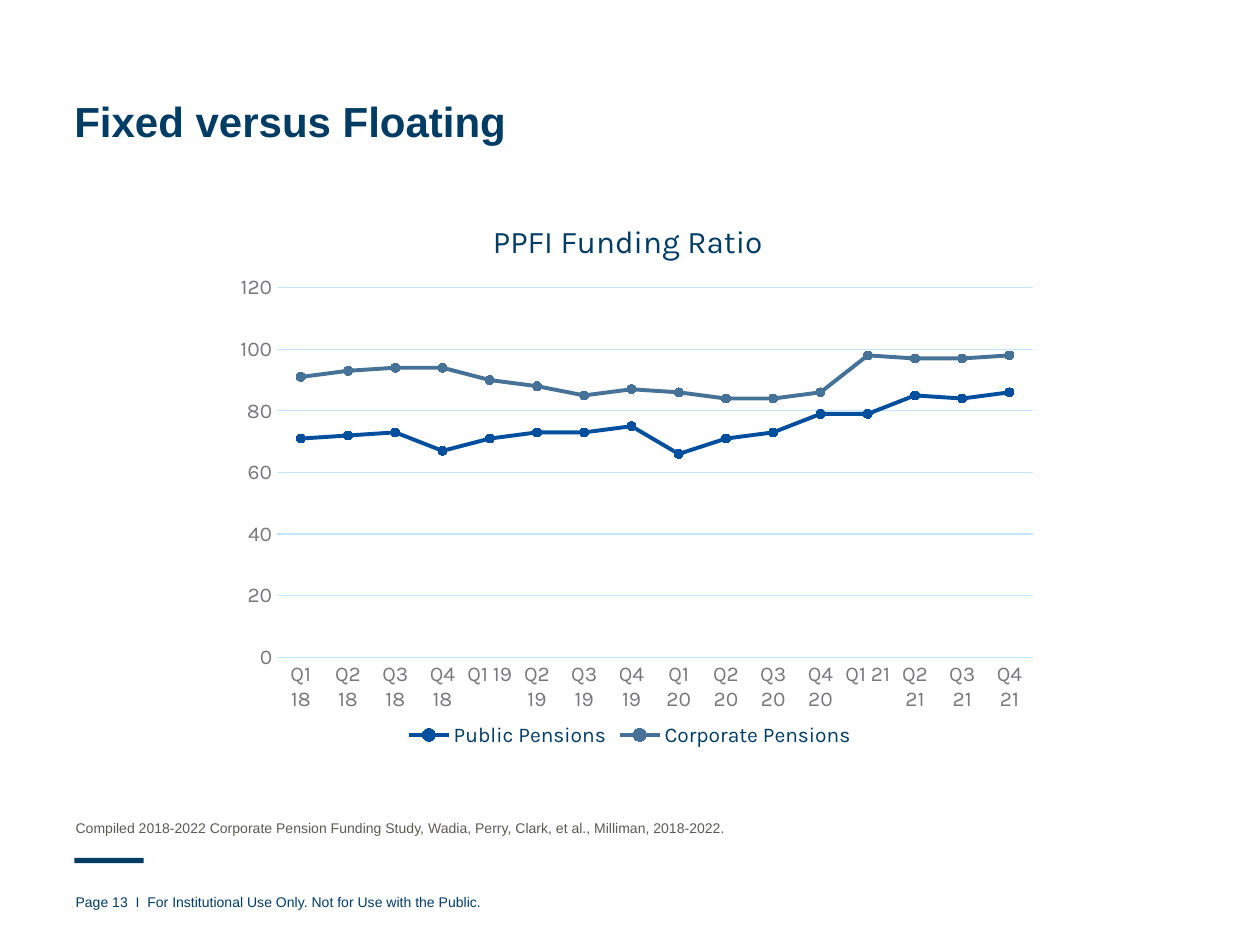
from dataclasses import dataclass, field
from typing import Any

from lxml.etree import SubElement
from pptx import Presentation
from pptx.chart.data import CategoryChartData
from pptx.dml.color import RGBColor
from pptx.enum.chart import (XL_CHART_TYPE, XL_LEGEND_POSITION,
                             XL_MARKER_STYLE, XL_TICK_MARK)
from pptx.enum.shapes import MSO_SHAPE
from pptx.enum.text import MSO_ANCHOR
from pptx.oxml.ns import qn
from pptx.util import Pt

NAVY, GREY, SKY = "003C64", "77787B", "C2E6FF"


@dataclass
class Label:
    text: str
    box: tuple[float, float, float, float]
    anchor: Any = MSO_ANCHOR.BOTTOM
    color: str = NAVY
    form: dict = field(default_factory=lambda: {"size": Pt(8)})


@dataclass
class Trend:
    name: str
    color: str
    vals: tuple[int, ...]


LABELS = [
    Label("Page 13  I", (43.2, 506.9, 53.3, 13)),
    Label("For Institutional Use Only. Not for Use with the Public.",
          (84.2, 492.5, 438.5, 27.4), color="003C6A"),
    Label("Compiled 2018-2022 Corporate Pension Funding Study, Wadia, Perry, "
          "Clark, et al., Milliman, 2018-2022.",
          (43.2, 429.8, 634.3, 48.2), color="5B5A51"),
    Label("Fixed versus Floating", (42.5, 54.7, 635, 31), MSO_ANCHOR.TOP,
          form={"size": Pt(24), "bold": True}),
]
TRENDS = [
    Trend("Public Pensions", "004F9F",
          (71, 72, 73, 67, 71, 73, 73, 75, 66, 71, 73, 79, 79, 85, 84, 86)),
    Trend("Corporate Pensions", "457296",
          (91, 93, 94, 94, 90, 88, 85, 87, 86, 84, 84, 86, 98, 97, 97, 98)),
]
QUARTERS = [f"Q{part} {year}" for year in range(18, 22) for part in range(1, 5)]


def paint(part: Any, color: str) -> None:
    """Give a font, fill or line the hex colour."""
    if hasattr(part, "solid"):
        part.solid()
        part = part.fore_color
    else:
        part = part.color
    part.rgb = RGBColor.from_string(color)


def apply(part: Any, form: dict) -> None:
    """Set every format value on the part."""
    for key, val in form.items():
        setattr(part, key, val)


def style(font: Any, color: str, form: dict) -> None:
    """Format a font and colour it."""
    apply(font, form)
    paint(font, color)


def stroke(line: Any, color: str, width: float) -> None:
    """Colour a line and set its width in points."""
    paint(line, color)
    line.width = Pt(width)


def place(home: Any, spots: dict, inner: bool = False) -> None:
    """Fix a chart part at fractions of the chart area."""
    layout = home.find(qn("c:layout"))
    if layout is None:
        layout = home.makeelement(qn("c:layout"))
        text = home.find(qn("c:tx"))
        home.insert(0 if text is None else home.index(text) + 1, layout)
    for child in list(layout):
        layout.remove(child)
    manual = SubElement(layout, qn("c:manualLayout"))
    rules = {"layoutTarget": "inner"} if inner else {}
    rules |= {"xMode": "edge", "yMode": "edge"} | spots
    for key, val in rules.items():
        SubElement(manual, qn(f"c:{key}")).set("val", str(val))


def write(slide: Any, label: Label) -> None:
    """Draw one text label without insets."""
    frame = slide.shapes.add_textbox(*map(Pt, label.box)).text_frame
    edges = {f"margin_{side}": 0 for side in ("left", "top", "right", "bottom")}
    apply(frame, edges | {"word_wrap": True, "vertical_anchor": label.anchor})
    run = frame.paragraphs[0].add_run()
    run.text = label.text
    style(run.font, label.color, {"name": "Arial"} | label.form)


def plot(slide: Any) -> None:
    """Draw the funding ratio line chart."""
    data = CategoryChartData(number_format="0")
    data.categories = QUARTERS
    for trend in TRENDS:
        data.add_series(trend.name, trend.vals)
    chart = slide.shapes.add_chart(
        XL_CHART_TYPE.LINE_MARKERS, Pt(120), Pt(110), Pt(480), Pt(320), data).chart
    body = {"name": "Karla", "size": Pt(12)}
    style(chart.font, NAVY, body | {"size": Pt(10)})

    frame = chart.chart_title.text_frame
    frame.text = "PPFI Funding Ratio"
    style(frame.paragraphs[0].runs[0].font, NAVY,
          body | {"size": Pt(18), "bold": False})
    chart.chart_title.include_in_layout = False
    place(chart.chart_title._element, {"x": 0.33, "y": 0.04})

    chart.has_legend = True
    apply(chart.legend, {"position": XL_LEGEND_POSITION.BOTTOM,
                         "include_in_layout": False})
    style(chart.legend.font, NAVY, body)

    ticks = {"major_tick_mark": XL_TICK_MARK.NONE,
             "minor_tick_mark": XL_TICK_MARK.NONE}
    for axis in (chart.category_axis, chart.value_axis):
        apply(axis, ticks)
        style(axis.tick_labels.font, GREY, body)
    stroke(chart.category_axis.format.line, SKY, 0.75)
    scale = chart.value_axis
    apply(scale, {"minimum_scale": 0, "maximum_scale": 120, "major_unit": 20})
    scale.format.line.fill.background()
    stroke(scale.major_gridlines.format.line, SKY, 0.75)

    lines = chart.plots[0]
    lines.vary_by_categories = False
    for row, trend in zip(lines.series, TRENDS):
        row.smooth = False
        stroke(row.format.line, trend.color, 2.25)
        apply(row.marker, {"style": XL_MARKER_STYLE.CIRCLE, "size": 5})
        paint(row.marker.format.fill, trend.color)
        paint(row.marker.format.line, trend.color)
    area = chart._chartSpace.chart.plotArea
    place(area, {"x": 0.08, "y": 0.17, "w": 0.9, "h": 0.66}, inner=True)


def main() -> None:
    """Build the slide and save it."""
    deck = Presentation()
    apply(deck, {"slide_width": Pt(720), "slide_height": Pt(540)})
    slide = deck.slides.add_slide(deck.slide_layouts[6])
    for label in LABELS:
        write(slide, label)
    bar = slide.shapes.add_shape(
        MSO_SHAPE.RECTANGLE, Pt(42.5), Pt(490.3), Pt(39.6), Pt(2.9))
    bar.shadow.inherit = False
    paint(bar.fill, NAVY)
    bar.line.fill.background()
    plot(slide)
    deck.save("out.pptx")


if __name__ == "__main__":
    main()
